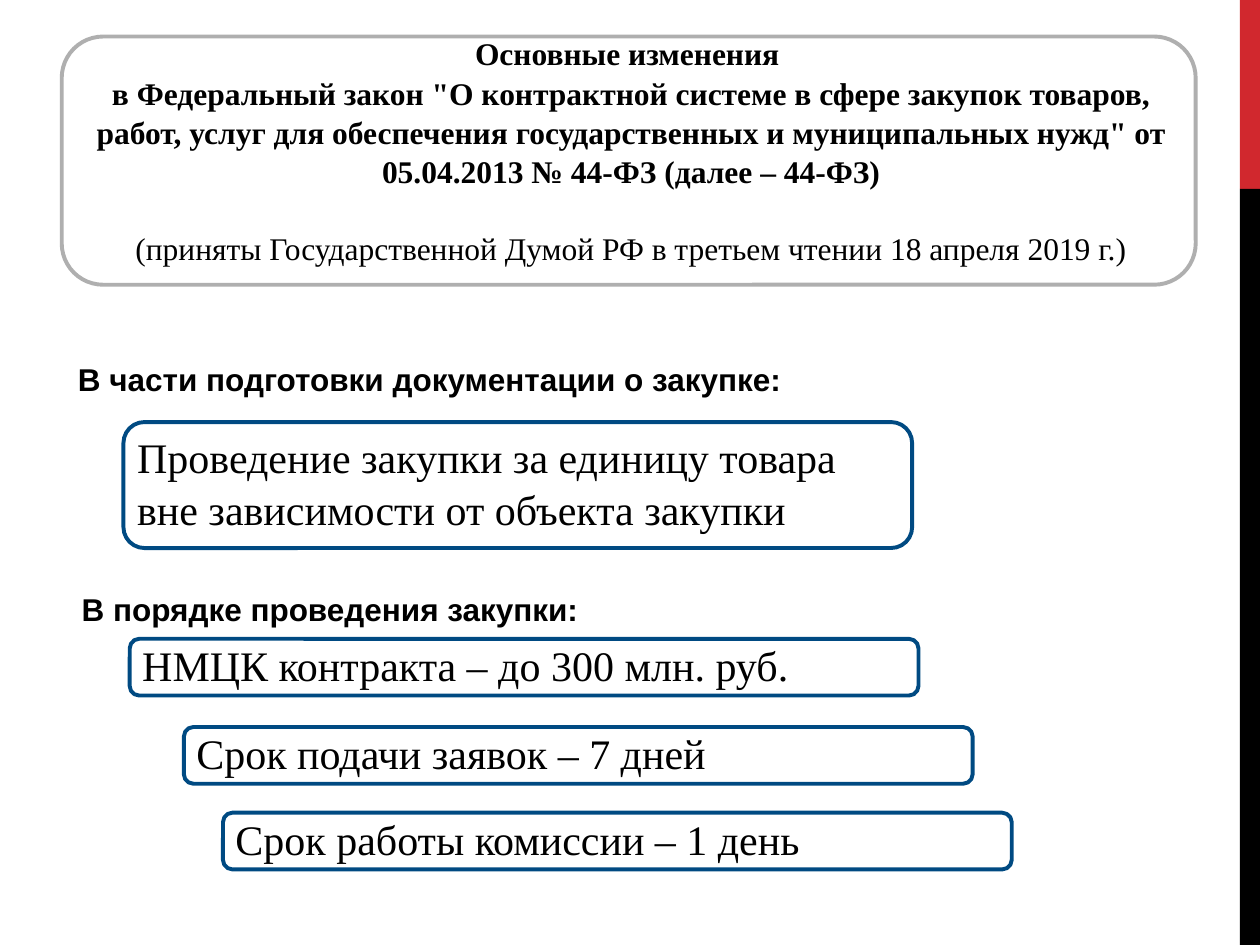
import pptx
import pptx.util
import pptx.dml.color
import pptx.enum.shapes
import pptx.enum.text

Inches = pptx.util.Inches
Pt = pptx.util.Pt
SHAPES = pptx.enum.shapes.MSO_SHAPE
ALIGN = pptx.enum.text.PP_ALIGN
ANCHOR = pptx.enum.text.MSO_ANCHOR
FIT = pptx.enum.text.MSO_AUTO_SIZE

COLORS = {"text": "000000", "red": "D1282E", "black": "000000",
          "gray": "AFAFAF", "blue": "004A82"}
SERIF, SANS = "Times New Roman", "Arial"
LINE_SPACING = 1.04

TITLE = [
    ("Основные изменения ", True),
    ('в Федеральный закон "О контрактной системе в сфере закупок товаров, '
     'работ, услуг для обеспечения государственных и муниципальных нужд" '
     'от 05.04.2013 № 44-ФЗ (далее – 44-ФЗ)', True),
    ("(приняты Государственной Думой РФ в третьем чтении "
     "18 апреля 2019 г.)", False),
]
# Headings: text, box
HEADINGS = [
    ("В части подготовки документации о закупке:", (0.52, 2.8, 5.85, 0.4)),
    ("В порядке проведения закупки:", (0.55, 4.62, 4.18, 0.4)),
]
# Framed statements: text, frame box, text box
STATEMENTS = [
    ("Проведение закупки за единицу товара вне зависимости от объекта закупки",
     (0.98, 3.35, 6.26, 1), (0.99, 3.36, 6.14, 0.91)),
] + [
    (text, (left, top, 6.26, 0.45), (left, top - 0.06, 6.19, 0.91))
    for text, left, top in [
        ("НМЦК контракта – до 300 млн. руб.", 1.03, 5.07),
        ("Срок подачи заявок – 7 дней", 1.46, 5.77),
        ("Срок работы комиссии – 1 день", 1.77, 6.45),
    ]
]


def rgb(name):
    return pptx.dml.color.RGBColor.from_string(COLORS[name])


def add_span(para, text, font, size, bold=False):
    para.line_spacing = LINE_SPACING
    span = para.add_run()
    span.text = text
    span.font.name = font
    span.font.size = Pt(size)
    span.font.bold = bold
    span.font.color.rgb = rgb("text")


def add_bar(page, box, color):
    bar = page.shapes.add_shape(SHAPES.RECTANGLE, *map(Inches, box))
    bar.shadow.inherit = False
    bar.fill.solid()
    bar.fill.fore_color.rgb = rgb(color)
    bar.line.fill.background()


def add_frame(page, box, color):
    frame = page.shapes.add_shape(SHAPES.ROUNDED_RECTANGLE, *map(Inches, box))
    frame.shadow.inherit = False
    frame.fill.background()
    frame.line.color.rgb = rgb(color)
    frame.line.width = Pt(2.25)


def add_text(page, box, text, font, size, bold=False, wrap=True):
    label = page.shapes.add_textbox(*map(Inches, box))
    label.text_frame.word_wrap = wrap
    label.text_frame.auto_size = FIT.SHAPE_TO_FIT_TEXT
    add_span(label.text_frame.paragraphs[0], text, font, size, bold)


def fill_title(page, box):
    title = page.shapes.title
    title.left, title.top, title.width, title.height = map(Inches, box)
    body = title.text_frame
    body.word_wrap = True
    body.auto_size = FIT.NONE
    body.vertical_anchor = ANCHOR.MIDDLE
    for index, (text, bold) in enumerate(TITLE):
        para = body.add_paragraph() if index else body.paragraphs[0]
        para.alignment = ALIGN.CENTER
        para.space_before = Pt(0 if bold else 21.6)
        add_span(para, text, SERIF, 18, bold)


def add_side_strip(page, left, width):
    add_bar(page, (left, 0, width, 1.5), "red")
    add_bar(page, (left, 1.5, width, 6), "black")


def add_statement(page, text, frame_box, text_box):
    add_frame(page, frame_box, "blue")
    add_text(page, text_box, text, SERIF, 24)


def main():
    deck = pptx.Presentation()
    deck.slide_width, deck.slide_height = Inches(10), Inches(7.5)
    page = deck.slides.add_slide(deck.slide_layouts[5])

    # Side strip
    add_side_strip(page, 9.84, 0.16)

    # Framed title
    fill_title(page, (0.51, 0.44, 9, 1.5))
    add_frame(page, (0.49, 0.29, 9, 1.97), "gray")

    # Section headings and their statements
    for text, box in HEADINGS:
        add_text(page, box, text, SANS, 18, bold=True, wrap=False)
    for statement in STATEMENTS:
        add_statement(page, *statement)

    deck.save("out.pptx")


if __name__ == "__main__":
    main()
